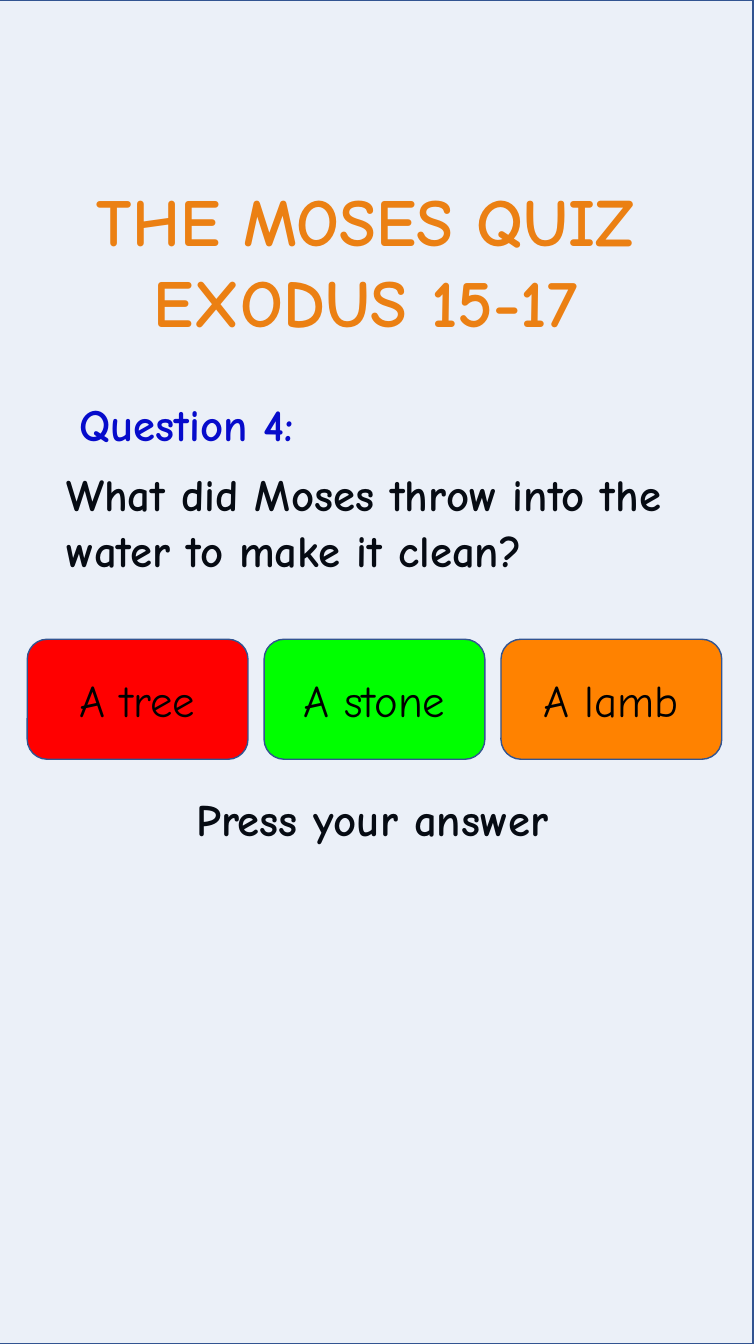
from dataclasses import dataclass
from typing import Any

from lxml.etree import SubElement
from pptx import Presentation
from pptx.dml.color import RGBColor
from pptx.enum.shapes import MSO_SHAPE
from pptx.enum.text import MSO_ANCHOR, PP_ALIGN
from pptx.oxml.ns import qn
from pptx.util import Inches, Pt

COLORS = {
    "orange": "FF8200",
    "red": "FF0000",
    "green": "00FF00",
    "blue": "0000CC",
    "black": "000000",
    "tint": "4472C4",
    "border": "325491",
}
FONT = "Comic Neue"
SLIDE_WIDTH, SLIDE_HEIGHT = 7.5, 13.33
ANSWER_LEFT, ANSWER_TOP, ANSWER_PITCH = 0.27, 6.34, 2.35
ANSWER_WIDTH, ANSWER_HEIGHT = 2.19, 1.19


@dataclass
class Box:
    left: float
    top: float
    width: float
    height: float

    def lengths(self) -> tuple:
        return tuple(map(Inches, (self.left, self.top, self.width, self.height)))


@dataclass
class Answer:
    text: str
    color: str


ANSWERS = [Answer("A tree", "red"), Answer("A stone", "green"), Answer("A lamb", "orange")]


def color(name: str) -> RGBColor:
    return RGBColor.from_string(COLORS[name])


def write(frame: Any, *lines: str, size: float = 32, ink: str = "black",
          bold: bool = True, align: PP_ALIGN = PP_ALIGN.LEFT, wrap: bool = True,
          spacing: Any = None, before: float = 0) -> None:
    """Fill a text frame with one paragraph per line."""
    frame.word_wrap = wrap
    for index, line in enumerate(lines):
        paragraph = frame.add_paragraph() if index else frame.paragraphs[0]
        paragraph.alignment = align
        paragraph.space_before = Pt(before)
        if spacing is not None:
            paragraph.line_spacing = spacing
        run = paragraph.add_run()
        run.text = line
        run.font.name = FONT
        run.font.size = Pt(size)
        run.font.bold = bold
        run.font.color.rgb = color(ink)


def add_text(slide: Any, box: Box, *lines: str, **text_format: Any) -> None:
    write(slide.shapes.add_textbox(*box.lengths()).text_frame, *lines, **text_format)


def add_panel(slide: Any, kind: MSO_SHAPE, box: Box, fill: str) -> Any:
    panel = slide.shapes.add_shape(kind, *box.lengths())
    panel.shadow.inherit = False
    panel.fill.solid()
    panel.fill.fore_color.rgb = color(fill)
    panel.line.color.rgb = color("border")
    panel.line.width = Pt(1)
    return panel


def add_answer(slide: Any, box: Box, answer: Answer) -> None:
    button = add_panel(slide, MSO_SHAPE.ROUNDED_RECTANGLE, box, answer.color)
    button.text_frame.vertical_anchor = MSO_ANCHOR.MIDDLE
    write(button.text_frame, answer.text, bold=False, align=PP_ALIGN.CENTER)


def main() -> None:
    presentation = Presentation()
    presentation.slide_width = Inches(SLIDE_WIDTH)
    presentation.slide_height = Inches(SLIDE_HEIGHT)
    slide = presentation.slides.add_slide(presentation.slide_layouts[6])

    # Title and question
    add_text(slide, Box(0.3, 1.73, 6.89, 1.72), "THE MOSES QUIZ ", "EXODUS 15-17 ",
             size=48, ink="orange", align=PP_ALIGN.CENTER, wrap=False)
    add_text(slide, Box(0.47, 3.89, 2.77, 0.64), "Question 4:",
             ink="blue", align=PP_ALIGN.CENTER, wrap=False)
    add_text(slide, Box(0.56, 4.56, 6.36, 1.46),
             "What did Moses throw into the water to make it clean?",
             spacing=Pt(40), before=7.5)
    add_text(slide, Box(1.85, 7.86, 4.22, 0.72), "Press your answer",
             spacing=0.9, before=7.5)

    # Translucent tint over the whole slide
    tint = add_panel(slide, MSO_SHAPE.RECTANGLE,
                     Box(-0.03, 0, SLIDE_WIDTH, SLIDE_HEIGHT), "tint")
    tint_color = tint.fill._xPr.find(qn("a:solidFill"))[0]
    SubElement(tint_color, qn("a:alpha"), val="10000")

    # Answer buttons
    for index, answer in enumerate(ANSWERS):
        left = ANSWER_LEFT + index * ANSWER_PITCH
        add_answer(slide, Box(left, ANSWER_TOP, ANSWER_WIDTH, ANSWER_HEIGHT), answer)

    presentation.save("out.pptx")


if __name__ == "__main__":
    main()
